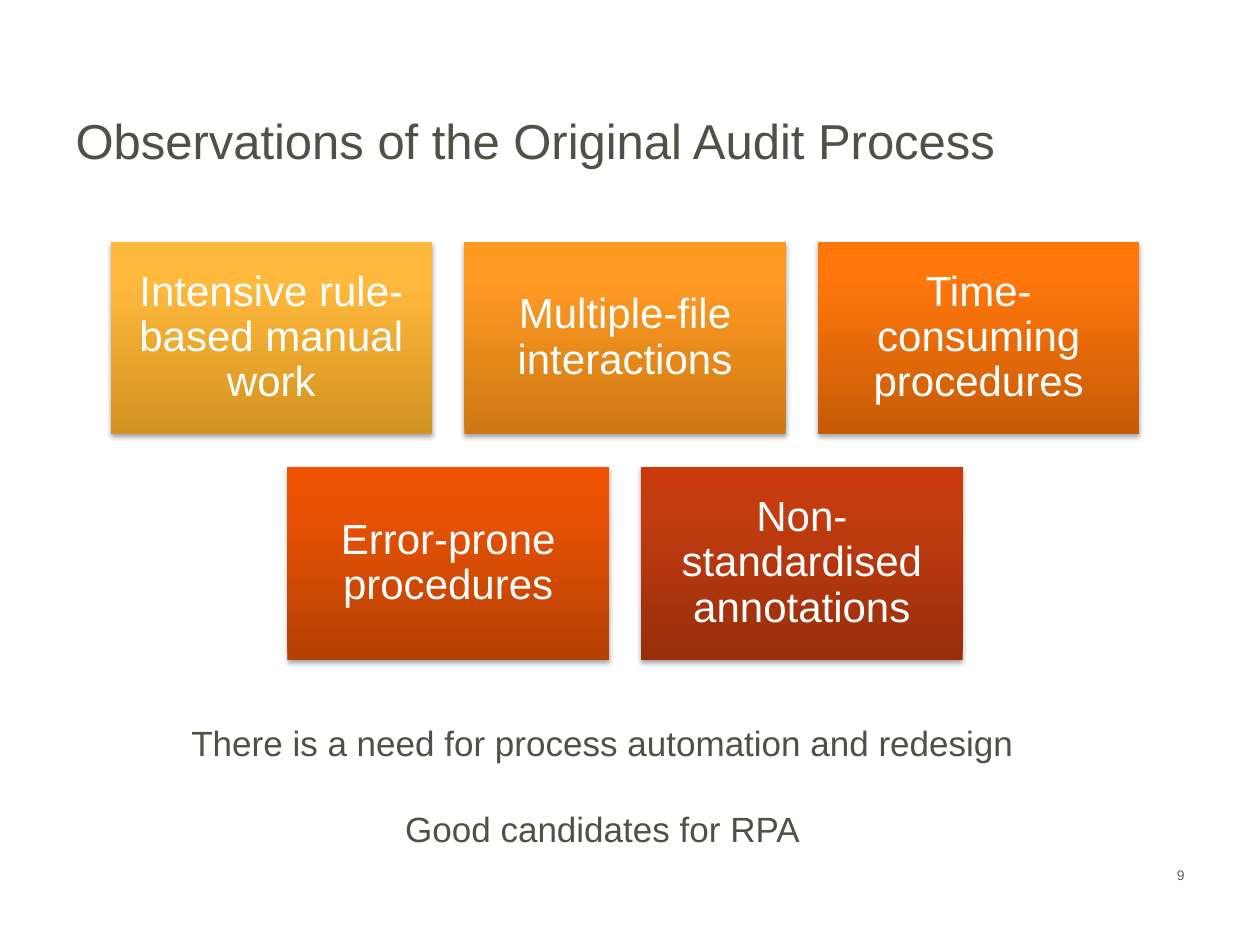
from pptx import Presentation
from pptx import util as u
from pptx.dml.color import RGBColor
from pptx.enum import shapes, text
from pptx.oxml import parse_xml
from pptx.oxml.ns import nsdecls

TITLE = "Observations of the Original Audit Process"
OBSERVATIONS = [
    [
        ("Intensive rule-based manual work", ("D39320", "FFB93D", "FFBA3E")),
        ("Multiple-file interactions", ("CD7812", "FF9A23", "FF9B25")),
        ("Time-consuming procedures", ("C55B07", "FF760A", "FF770B")),
    ],
    [
        ("Error-prone procedures", ("B54003", "EA5304", "F05200")),
        ("Non-standardised annotations", ("982E0C", "C53C10", "CA3A0C")),
    ],
]
CONCLUSIONS = [
    "There is a need for process automation and redesign",
    "Good candidates for RPA",
]
PAGE_NUMBER = "9"

THEME = {
    "font": "Arial",
    "ink": "505046",
    "card_ink": "FFFFFF",
    "page_ink": "5F5F5F",
    "title_size": 28,
    "card_size": 24,
    "conclusion_size": 20,
    "page_size": 7.9,
    "stops": (0, 80, 100),
}
CARD_WIDTH, CARD_HEIGHT, GAP = 6.48, 3.89, 0.65
GRID_CENTER, GRID_TOP = 12.6, 4.87


def box(left, top, width, height):
    return [u.Cm(length) for length in (left, top, width, height)]


def write(frame, lines, size, ink, align, anchor=text.MSO_ANCHOR.TOP):
    frame.word_wrap = True
    frame.vertical_anchor = anchor
    frame.text = "\n".join(lines)
    for paragraph in frame.paragraphs:
        paragraph.alignment = align
        paragraph.font.name = THEME["font"]
        paragraph.font.size = u.Pt(size)
        paragraph.font.color.rgb = RGBColor.from_string(ink)


def shade(card, colours):
    stops = "".join(
        f'<a:gs pos="{stop * 1000}"><a:srgbClr val="{colour}"/></a:gs>'
        for stop, colour in zip(THEME["stops"], colours)
    )
    gradient = parse_xml(
        f'<a:gradFill {nsdecls("a")} rotWithShape="1"><a:gsLst>{stops}</a:gsLst>'
        '<a:lin ang="16200000" scaled="0"/></a:gradFill>'
    )
    shadow = parse_xml(
        f'<a:effectLst {nsdecls("a")}><a:outerShdw blurRad="{u.Pt(3.1)}" '
        f'dist="{u.Pt(1.8)}" dir="5400000" rotWithShape="0">'
        '<a:srgbClr val="000000"><a:alpha val="35000"/></a:srgbClr>'
        "</a:outerShdw></a:effectLst>"
    )
    card.line.fill.background()
    properties = card._element.spPr
    properties.insert(2, gradient)
    properties.append(shadow)


def add_card(slide, label, colours, left, top):
    card = slide.shapes.add_shape(
        shapes.MSO_SHAPE.RECTANGLE, *box(left, top, CARD_WIDTH, CARD_HEIGHT)
    )
    shade(card, colours)
    frame = card.text_frame
    frame.margin_left = frame.margin_right = u.Cm(0.25)
    frame.margin_top = frame.margin_bottom = u.Cm(0.25)
    write(frame, [label], THEME["card_size"], THEME["card_ink"],
          text.PP_ALIGN.CENTER, text.MSO_ANCHOR.MIDDLE)
    frame.paragraphs[0].line_spacing = 0.9


def main():
    deck = Presentation()
    deck.slide_width, deck.slide_height = u.Cm(25.4), u.Cm(19.05)
    slide = deck.slides.add_slide(deck.slide_layouts[5])

    title = slide.shapes.title
    title.left, title.top, title.width, title.height = box(1.27, 1.7, 22.86, 2.24)
    write(title.text_frame, [TITLE], THEME["title_size"], THEME["ink"],
          text.PP_ALIGN.LEFT, text.MSO_ANCHOR.MIDDLE)

    for row, cards in enumerate(OBSERVATIONS):
        row_width = len(cards) * (CARD_WIDTH + GAP) - GAP
        row_left = GRID_CENTER - row_width / 2
        for column, (label, colours) in enumerate(cards):
            add_card(slide, label, colours,
                     row_left + column * (CARD_WIDTH + GAP),
                     GRID_TOP + row * (CARD_HEIGHT + GAP))

    conclusions = slide.shapes.add_textbox(*box(3.55, 14.43, 17.2, 2.82)).text_frame
    write(conclusions, CONCLUSIONS, THEME["conclusion_size"], THEME["ink"],
          text.PP_ALIGN.CENTER)
    conclusions.paragraphs[1].space_before = u.Pt(25)

    page = slide.shapes.add_textbox(*box(18.21, 17.35, 5.92, 1.32)).text_frame
    write(page, [PAGE_NUMBER], THEME["page_size"], THEME["page_ink"],
          text.PP_ALIGN.RIGHT)

    deck.save("out.pptx")


if __name__ == "__main__":
    main()
